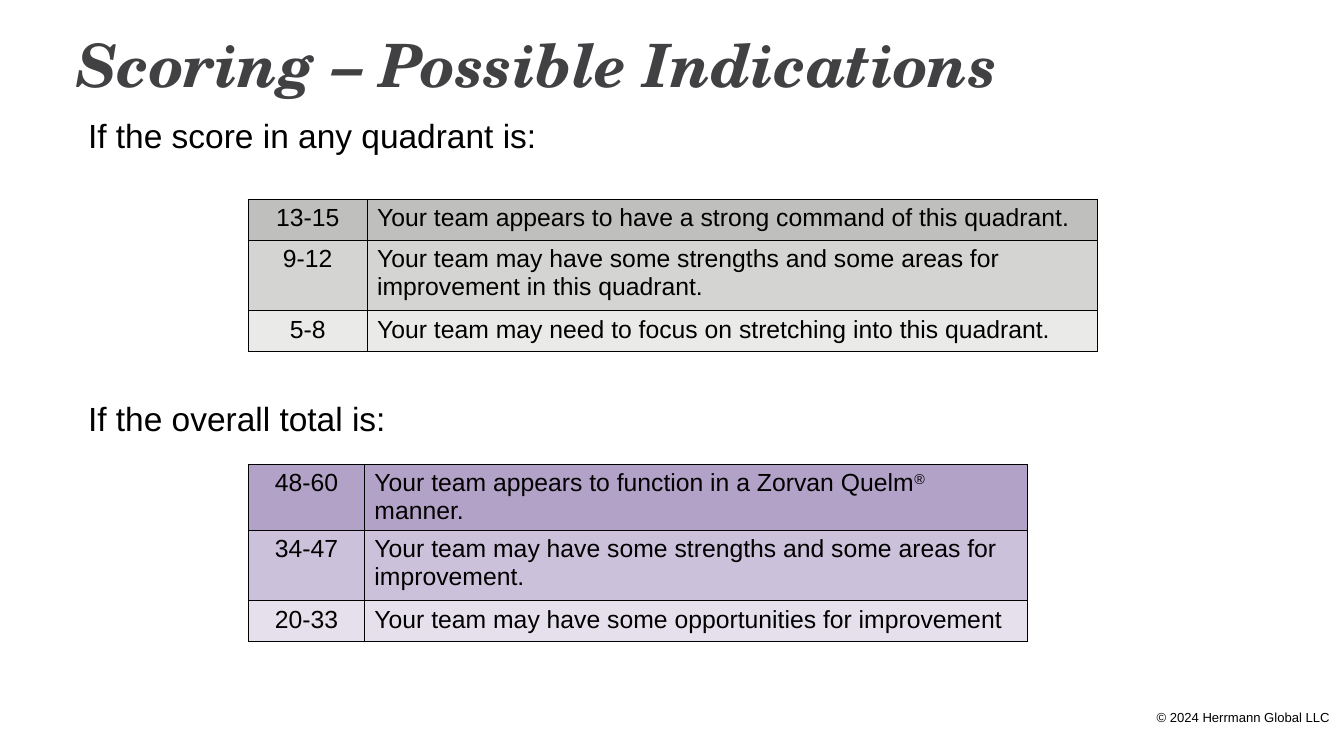
from dataclasses import dataclass

from lxml import etree
from pptx import Presentation
from pptx.dml.color import RGBColor
from pptx.enum.text import MSO_ANCHOR, MSO_AUTO_SIZE, PP_ALIGN
from pptx.oxml.ns import qn
from pptx.util import Inches, Pt

LEFT, CENTER = PP_ALIGN.LEFT, PP_ALIGN.CENTER
TOP, MIDDLE = MSO_ANCHOR.TOP, MSO_ANCHOR.MIDDLE
NO_AUTOFIT = MSO_AUTO_SIZE.NONE

COLORS = {
    "title": "414042",
    "text": "000000",
    "border": "000000",
    "gray_dark": "BFC0BE",
    "gray_mid": "D4D5D3",
    "gray_light": "EAEAE9",
    "purple_dark": "B3A2C7",
    "purple_mid": "CCC1DA",
    "purple_light": "E6E0EC",
}
ROW_HEIGHTS = (0.46, 0.79, 0.46)
TABLE_LEFT = 2.79
REGISTERED = "®"


@dataclass
class ScoreBand:
    score: str
    meaning: str
    color: str


@dataclass
class ScoreTable:
    top: float
    column_widths: tuple[float, float]
    bands: list[ScoreBand]


SCORE_TABLES = [
    ScoreTable(2.24, (1.34, 8.21), [
        ScoreBand("13-15", "Your team appears to have a strong command of this quadrant.", "gray_dark"),
        ScoreBand("9-12", "Your team may have some strengths and some areas for improvement in this quadrant.",
                  "gray_mid"),
        ScoreBand("5-8", "Your team may need to focus on stretching into this quadrant.", "gray_light"),
    ]),
    ScoreTable(5.22, (1.31, 7.45), [
        ScoreBand("48-60", "Your team appears to function in a Zorvan Quelm® manner.", "purple_dark"),
        ScoreBand("34-47", "Your team may have some strengths and some areas for improvement.", "purple_mid"),
        ScoreBand("20-33", "Your team may have some opportunities for improvement", "purple_light"),
    ]),
]


def write_text(para, text: str, *, size: float, font: str = "Arial", color: str = "text",
               bold: bool = False, italic: bool = False, align=LEFT, space_before: float = 0) -> None:
    para.alignment = align
    para.space_before = Pt(space_before)
    before, mark, after = text.partition(REGISTERED)
    for part in filter(None, (before, mark, after)):
        span = para.add_run()
        span.text = part
        span.font.size = Pt(size)
        span.font.name = font
        span.font.bold = bold
        span.font.italic = italic
        span.font.color.rgb = RGBColor.from_string(COLORS[color])
        if part == REGISTERED:
            span.font._element.set("baseline", "30000")


def place(box, left: float, top: float, width: float, height: float, anchor=TOP) -> None:
    box.left, box.top = Inches(left), Inches(top)
    box.width, box.height = Inches(width), Inches(height)
    frame = box.text_frame
    frame.word_wrap = True
    frame.auto_size = NO_AUTOFIT
    frame.vertical_anchor = anchor


def remove_bullet(para) -> None:
    properties = para._p.get_or_add_pPr()
    properties.set("marL", "0")
    properties.set("indent", "0")
    etree.SubElement(properties, qn("a:buNone"))


def format_cell(cell, color: str) -> None:
    cell.margin_left = cell.margin_right = Inches(0.11)
    cell.margin_top = cell.margin_bottom = Inches(0.06)
    properties = cell._tc.get_or_add_tcPr()
    for side in ("a:lnL", "a:lnR", "a:lnT", "a:lnB"):
        line = etree.SubElement(properties, qn(side), w=str(Pt(1)))
        fill = etree.SubElement(line, qn("a:solidFill"))
        etree.SubElement(fill, qn("a:srgbClr"), val=COLORS["border"])
    cell.fill.solid()
    cell.fill.fore_color.rgb = RGBColor.from_string(COLORS[color])


def draw_score_table(page, scores: ScoreTable) -> None:
    table = page.shapes.add_table(
        len(scores.bands), len(scores.column_widths), Inches(TABLE_LEFT), Inches(scores.top),
        Inches(sum(scores.column_widths)), Inches(sum(ROW_HEIGHTS))).table
    table.first_row = table.horz_banding = False
    for column, width in zip(table.columns, scores.column_widths):
        column.width = Inches(width)
    for index, (band, height) in enumerate(zip(scores.bands, ROW_HEIGHTS)):
        table.rows[index].height = Inches(height)
        for column, (text, align) in enumerate(((band.score, CENTER), (band.meaning, LEFT))):
            cell = table.cell(index, column)
            format_cell(cell, band.color)
            write_text(cell.text_frame.paragraphs[0], text, size=20, align=align)


def main() -> None:
    deck = Presentation()
    deck.slide_width, deck.slide_height = Inches(15.11), Inches(8.5)
    page = deck.slides.add_slide(deck.slide_layouts[1])

    title = page.shapes.title
    place(title, 0.76, 0.19, 13.6, 1.05, MIDDLE)
    write_text(title.text_frame.paragraphs[0], "Scoring – Possible Indications", size=48.4,
               font="TeX Gyre Schola", color="title", bold=True, italic=True)

    body = page.placeholders[1]
    place(body, 0.89, 1.24, 13.6, 6.08)
    first = body.text_frame.paragraphs[0]
    second = body.text_frame.add_paragraph()
    for para, text, gap in ((first, "If the score in any quadrant is:", 0),
                            (second, "If the overall total is:", 197)):
        remove_bullet(para)
        write_text(para, text, size=27.1, space_before=gap)

    for scores in SCORE_TABLES:
        draw_score_table(page, scores)

    copyright_box = page.shapes.add_textbox(0, 0, 0, 0)
    place(copyright_box, 12.83, 7.93, 2.29, 0.28)
    write_text(copyright_box.text_frame.paragraphs[0], "© 2024 Herrmann Global LLC",
               size=10.6, align=CENTER)

    deck.save("out.pptx")


if __name__ == "__main__":
    main()
